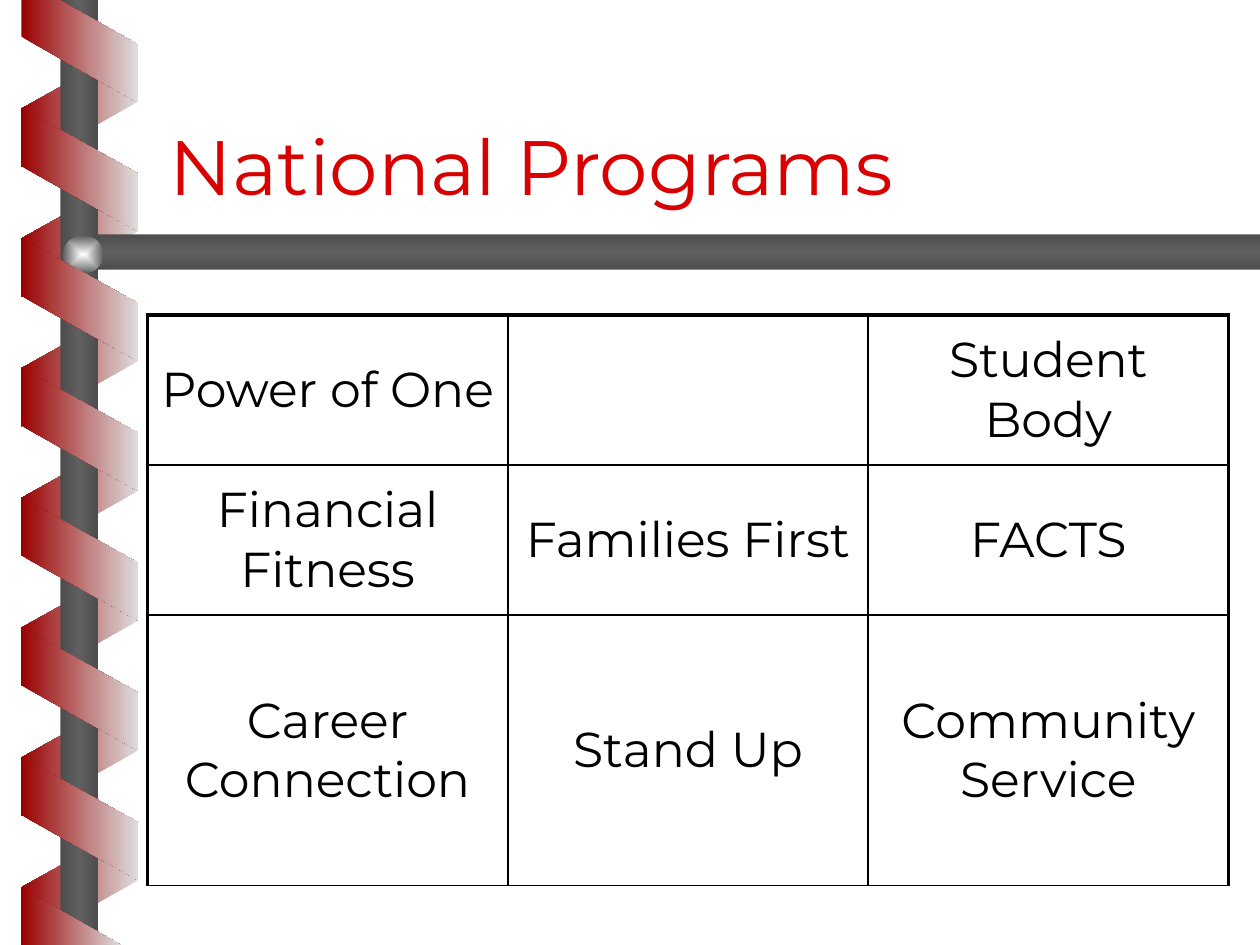
import pptx
import pptx.util
import pptx.oxml
import pptx.oxml.ns
import pptx.dml.color
import pptx.enum.shapes
import pptx.enum.text

Inches, Pt = pptx.util.Inches, pptx.util.Pt
SHAPES = pptx.enum.shapes.MSO_SHAPE
ANCHOR = pptx.enum.text.MSO_ANCHOR

TITLE = "National Programs"
PROGRAMS = [
    ["Power of One", "", "Student Body"],
    ["Financial Fitness", "Families First", "FACTS"],
    ["Career Connection", "Stand Up", "Community Service"],
]
ROW_HEIGHTS = [1.19, 1.19, 2.15]
COLUMN_WIDTH = 2.86
COLORS = {
    "title": "D80000", "text": "000000", "border": "000000",
    "ribbon": "990000", "ribbon_end": "DDDDDD",
    "bar_edge": "4D4D4D", "bar": "5F5F5F", "shine": "FEFFFF",
}
FONT = "Montserrat"
RIBBON_PITCH = 1.03
RIBBON = ["ribbon", "ribbon_end"]
BAR = ["bar_edge", "bar", "bar_edge"]
RIBBON_TOP = [(0.17, 0), (0.17, 0.29), (1.09, 0.81), (1.09, 0.35), (0.47, 0)]
RIBBON_BOTTOM = [(0.96, 7.5), (0.17, 7.05), (0.17, 7.5)]


def gradient_fill(shape, names, angle=0, from_center=False):
    """Spread the named colours evenly, fixed to the slide rather than the shape."""
    stops = "".join(
        f'<a:gs pos="{i * 100000 // (len(names) - 1)}"><a:srgbClr val="{COLORS[name]}"/></a:gs>'
        for i, name in enumerate(names))
    direction = f'<a:lin ang="{angle * 60000}" scaled="0"/>'
    if from_center:
        direction = ('<a:path path="shape"><a:fillToRect l="50000" t="50000" '
                     'r="50000" b="50000"/></a:path>')
    shape.fill.background()
    empty_fill = shape._element.spPr.find(pptx.oxml.ns.qn("a:noFill"))
    empty_fill.getparent().replace(empty_fill, pptx.oxml.parse_xml(
        f'<a:gradFill {pptx.oxml.ns.nsdecls("a")} rotWithShape="0">'
        f'<a:gsLst>{stops}</a:gsLst>{direction}</a:gradFill>'))
    shape.line.fill.background()
    shape.shadow.inherit = False


def add_part(slide, preset, box, names, adjustment=None, rotation=0, flip=False, **gradient):
    part = slide.shapes.add_shape(preset, *map(Inches, box))
    if adjustment is not None:
        part.adjustments[0] = adjustment
    part.rotation = rotation
    if flip:
        part._element.spPr.xfrm.set("flipH", "1")
    gradient_fill(part, names, **gradient)


def add_ribbon_turns(slide, first_top, count, names, rotation, flip):
    for turn in range(count):
        box = (0.14, first_top + turn * RIBBON_PITCH, 0.98, 0.93)
        add_part(slide, SHAPES.PARALLELOGRAM, box, names, 0.56, rotation, flip)


def add_ribbon_end(slide, points):
    start, *rest = [(Inches(x), Inches(y)) for x, y in points]
    builder = slide.shapes.build_freeform(*start)
    builder.add_line_segments(rest, close=True)
    gradient_fill(builder.convert_to_shape(), RIBBON)


def style_font(paragraph, size, color):
    values = {"name": FONT, "size": Pt(size), "bold": False}
    for attribute, value in values.items():
        setattr(paragraph.font, attribute, value)
    paragraph.font.color.rgb = pptx.dml.color.RGBColor.from_string(COLORS[color])


def set_borders(cell, widths):
    properties = cell._tc.get_or_add_tcPr()
    for position, (side, width) in enumerate(widths.items()):
        properties.insert(position, pptx.oxml.parse_xml(
            f'<a:ln{side} {pptx.oxml.ns.nsdecls("a")} w="{Pt(width)}"><a:solidFill>'
            f'<a:srgbClr val="{COLORS["border"]}"/></a:solidFill></a:ln{side}>'))


def add_title(slide):
    title = slide.shapes.add_textbox(*map(Inches, (1.25, 0.89, 8.5, 0.83)))
    title.text_frame.word_wrap = True
    title.text_frame.vertical_anchor = ANCHOR.BOTTOM
    title.text_frame.text = TITLE
    style_font(title.text_frame.paragraphs[0], 44, "title")


def add_programs(slide):
    columns = len(PROGRAMS[0])
    box = (1.17, 2.5, columns * COLUMN_WIDTH, sum(ROW_HEIGHTS))
    table = slide.shapes.add_table(len(PROGRAMS), columns, *map(Inches, box)).table
    table.first_row = table.horz_banding = False
    for column in table.columns:
        column.width = Inches(COLUMN_WIDTH)
    for r, programs in enumerate(PROGRAMS):
        table.rows[r].height = Inches(ROW_HEIGHTS[r])
        for c, program in enumerate(programs):
            cell = table.cell(r, c)
            cell.text = program
            cell.vertical_anchor = ANCHOR.MIDDLE
            cell.fill.background()
            paragraph = cell.text_frame.paragraphs[0]
            paragraph.alignment = pptx.enum.text.PP_ALIGN.CENTER
            style_font(paragraph, 28, "text")
            set_borders(cell, {
                "L": 2.25 if c == 0 else 1,
                "R": 2.25 if c == columns - 1 else 1,
                "T": 2.25 if r == 0 else 1,
                "B": 1,
            })


def main():
    deck = pptx.Presentation()
    deck.slide_width, deck.slide_height = Inches(10), Inches(7.5)
    slide = deck.slides.add_slide(deck.slide_layouts[6])

    add_ribbon_turns(slide, 0.37, 7, RIBBON[::-1], 90, True)
    add_part(slide, SHAPES.RECTANGLE, (0.48, 0, 0.3, 7.5), BAR)
    add_part(slide, SHAPES.PENTAGON, (0.6, 1.86, 9.4, 0.28), BAR, 0.59, flip=True, angle=90)
    add_part(slide, SHAPES.OVAL, (0.5, 1.87, 0.32, 0.3), ["shine", "bar"], from_center=True)
    add_ribbon_turns(slide, 0.88, 6, RIBBON, 270, False)
    for points in (RIBBON_TOP, RIBBON_BOTTOM):
        add_ribbon_end(slide, points)

    add_title(slide)
    add_programs(slide)
    deck.save("out.pptx")


if __name__ == "__main__":
    main()
